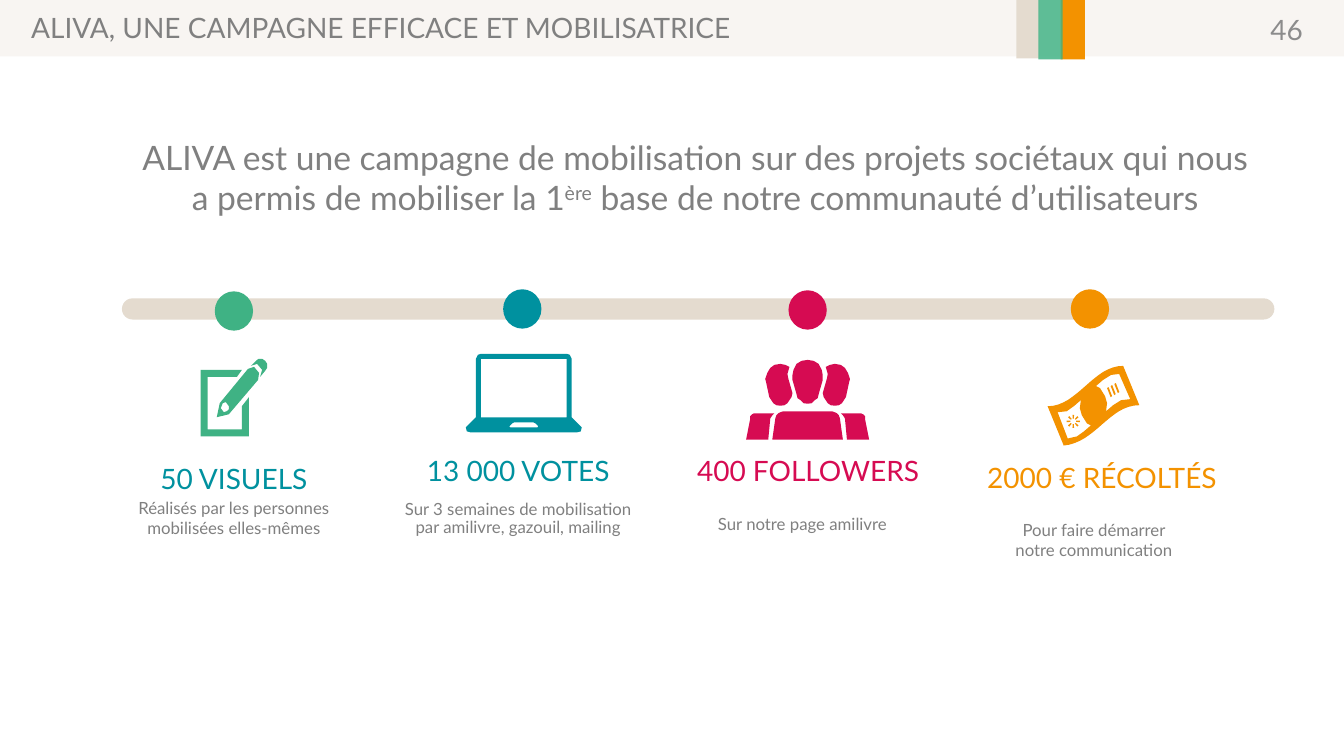
from math import cos, pi, sin
from lxml.etree import SubElement
from pptx import Presentation
from pptx.dml.color import RGBColor
from pptx.enum.shapes import MSO_SHAPE as Shape
from pptx.enum.text import MSO_ANCHOR as Anchor, MSO_AUTO_SIZE as Fit, PP_ALIGN as Align
from pptx.oxml.ns import qn
from pptx.util import Inches, Pt

SAND = RGBColor(0xE4, 0xDB, 0xCF)
GREEN = RGBColor(0x3F, 0xB2, 0x84)
TEAL = RGBColor(0x00, 0x91, 0x9F)
PINK = RGBColor(0xD6, 0x0B, 0x52)
GOLD = RGBColor(0xF3, 0x92, 0x00)
GRAY = RGBColor(0x80, 0x80, 0x80)
PALE = RGBColor(0x8C, 0x8C, 0x8C)

TITLE = "ALIVA, UNE CAMPAGNE EFFICACE ET MOBILISATRICE"
LEAD = [
    ("ALIVA est une campagne de mobilisation sur des projets sociétaux "
     "qui nous a permis de mobiliser la 1", False),
    ("ère", True),
    (" base de notre communauté d’utilisateurs", False),
]
PAGE = "46"

STEPS = [
    dict(dot=(2.13, 2.89), color=GREEN, ink=TEAL,
         head="50 VISUELS", head_at=(1.27, 4.53, 2.1),
         note="Réalisés par les personnes mobilisées elles-mêmes",
         note_at=(1.27, 4.89, 2.1), pitch=1),
    dict(dot=(4.99, 2.87), color=TEAL, ink=TEAL,
         head="13 000 VOTES", head_at=(3.9, 4.45, 2.48),
         note="Sur 3 semaines de mobilisation par amilivre, gazouil, mailing",
         note_at=(3.9, 4.92, 2.48), pitch=0.9),
    dict(dot=(7.82, 2.88), color=PINK, ink=PINK,
         head="400 FOLLOWERS", head_at=(6.12, 4.45, 3.79),
         note="Sur notre page amilivre",
         note_at=(6.93, 5.05, 2.06), pitch=1),
    dict(dot=(10.62, 2.87), color=GOLD, ink=GOLD,
         head="2000 € RÉCOLTÉS", head_at=(9.51, 4.52, 2.84),
         note="Pour faire démarrer notre communication",
         note_at=(9.83, 5.11, 2.04), pitch=1),
]

PENCIL = [
    [(206, 426), (240, 426), (240, 403), (247, 394), (247, 433),
     (199, 433), (199, 367), (240, 367), (235, 374), (206, 374)],
    [(252, 364), (257, 370), (256, 377), (227, 411), (215, 414),
     (218, 400), (246, 366)],
    [(224, 399), (221, 400), (219, 405), (222, 409), (225, 408),
     (227, 406), (227, 403)],
    [(263, 368), (258, 374), (260, 367), (255, 361), (249, 363),
     (254, 358), (256.5, 356), (260, 356), (263, 358), (265, 361), (265, 365)],
]
LAPTOP = [
    [(472, 414), (472, 356), (474, 352), (477, 351), (562, 351), (565, 352),
     (567, 356), (567, 414), (577, 424), (576, 428), (572, 429),
     (467, 429), (463, 428), (462, 424)],
    [(477, 414), (562, 414), (562, 356), (477, 356)],
    [(505, 423), (506, 424), (533, 424), (534, 423), (531, 420),
     (529, 419), (510, 419), (508, 420)],
]
SIDE = [
    [(740, 436), (744, 416), (744, 413), (746, 411), (748, 410), (768, 410),
     (766, 412), (764, 415), (762, 436)],
    [(786, 390), (785, 394), (783, 397), (781, 400), (778, 402), (774, 402.5),
     (770, 402), (767, 400), (765, 397), (763, 394), (760, 380), (759, 376),
     (761, 370), (764, 365), (768, 362), (774, 361), (779, 362), (783, 364),
     (781, 371), (782, 376)],
]
HALF = [
    [(801, 400.5), (797, 400), (794, 397), (791, 395), (790, 391), (786, 377),
     (786, 372), (787, 367), (790, 361), (795, 358), (801, 357)],
    [(801, 408), (777, 408), (774, 409), (772, 410), (770, 412), (769, 415),
     (766, 436), (801, 436)],
]
PANES = [
    [(1059, 435), (1068, 433), (1075, 428), (1082, 422), (1078, 420),
     (1073, 412), (1071, 405), (1072, 397), (1065, 403), (1058, 408), (1049, 409)],
    [(1110, 371), (1102, 372), (1094, 377), (1087, 383), (1091, 385),
     (1096, 393), (1098, 400), (1097, 408), (1104, 402), (1112, 397), (1121, 396)],
]
EDGES = [
    [(1130, 402), (1100, 402), (1087, 439), (1055, 442)],
    [(1039, 403), (1069, 403), (1084, 363), (1114, 363)],
]


def flip(points):
    return [(1602 - x, y) for x, y in reversed(points)]


def bend(ends):
    curve = []
    for i in range(17):
        t = i / 16
        mix = ((1 - t) ** 3, 3 * t * (1 - t) ** 2, 3 * t * t * (1 - t), t ** 3)
        curve.append(tuple(sum(m * p[k] for m, p in zip(mix, ends)) for k in (0, 1)))
    return curve


def ray(turn):
    c, s = cos(turn), sin(turn)
    return [(1064.5 + r * c - w * s, 418 + r * s + w * c)
            for r, w in ((2.8, -0.6), (6.5, -0.8), (6.5, 0.8), (2.8, 0.6))]


def bar(n):
    x, y = 1098 + 3.6 * n, 385 - 2 * n
    return [(x, y), (x + 1.5, y - 1), (x + 5, y + 8), (x + 3.5, y + 9)]


CROWD = SIDE + [flip(p) for p in SIDE] + [p + flip(p) for p in HALF]
BILL = ([bend(EDGES[0]) + bend(EDGES[1])] + PANES
        + [ray(k * pi / 4) for k in range(8)] + [bar(n) for n in range(3)])
ICONS = [PENCIL, LAPTOP, CROWD, BILL]

deck = Presentation()
deck.slide_width, deck.slide_height = Inches(13.33), Inches(7.5)
slide = deck.slides.add_slide(deck.slide_layouts[5])
shapes = slide.shapes


def paint(shape, color, alpha=100):
    shape.shadow.inherit = False
    shape.fill.solid()
    shape.fill.fore_color.rgb = color
    shape.line.fill.background()
    if alpha < 100:
        tint = shape.element.spPr.find(qn("a:solidFill"))[0]
        SubElement(tint, qn("a:alpha")).set("val", str(alpha * 1000))


def block(kind, box, color, alpha=100):
    shape = shapes.add_shape(kind, *map(Inches, box))
    paint(shape, color, alpha)
    return shape


def draw(rings, color):
    rings = [[(x * 10, y * 10) for x, y in ring] for ring in rings]
    pen = shapes.build_freeform(*rings[0][0], scale=914.4)
    for i, ring in enumerate(rings):
        if i:
            pen.move_to(*ring[0])
        pen.add_line_segments(ring[1:], close=True)
    paint(pen.convert_to_shape(), color)


def style(par, size, color, align=Align.CENTER, pitch=1):
    par.alignment = align
    par.line_spacing = pitch
    par.font.name, par.font.size = "Lato", Pt(size)
    par.font.color.rgb = color


def label(box, text, size, color, align=Align.CENTER, pitch=1):
    frame = shapes.add_textbox(*map(Inches, box)).text_frame
    frame.word_wrap = True
    par = frame.paragraphs[0]
    par.text = text
    style(par, size, color, align, pitch)
    return frame


block(Shape.RECTANGLE, (0, -0.02, 13.33, 0.58), SAND, 26)
block(Shape.RECTANGLE, (10.08, 0, 0.23, 0.58), SAND)
block(Shape.RECTANGLE, (10.52, -0.01, 0.24, 0.6), GOLD)
block(Shape.RECTANGLE, (10.3, -0.01, 0.24, 0.6), GREEN, 83)

title = shapes.title
title.left, title.top, title.width, title.height = map(Inches, (0.21, 0.09, 7.73, 0.4))
title.element.getparent().append(title.element)
frame = title.text_frame
frame.text = TITLE
frame.auto_size, frame.vertical_anchor = Fit.NONE, Anchor.TOP
style(frame.paragraphs[0], 20, GRAY, Align.LEFT, 0.9)

label((12.2, 0.09, 0.82, 0.4), PAGE, 20, PALE, Align.RIGHT).vertical_anchor = Anchor.MIDDLE

lead = label((1.27, 1.31, 11.25, 0.9), "", 24, GRAY).paragraphs[0]
for text, high in LEAD:
    run = lead.add_run()
    run.text = text
    if high:
        run.font._element.set("baseline", "30000")

track = block(Shape.ROUNDED_RECTANGLE, (1.21, 2.96, 11.43, 0.21), SAND)
track.adjustments[0] = 0.5

for step, icon in zip(STEPS, ICONS):
    block(Shape.OVAL, (*step["dot"], 0.38, 0.39), step["color"])
    draw(icon, step["color"])
    label((*step["head_at"], 0.43), step["head"], 20, step["ink"])
    label((*step["note_at"], 0.5), step["note"], 12, GRAY, pitch=step["pitch"])

deck.save("out.pptx")
